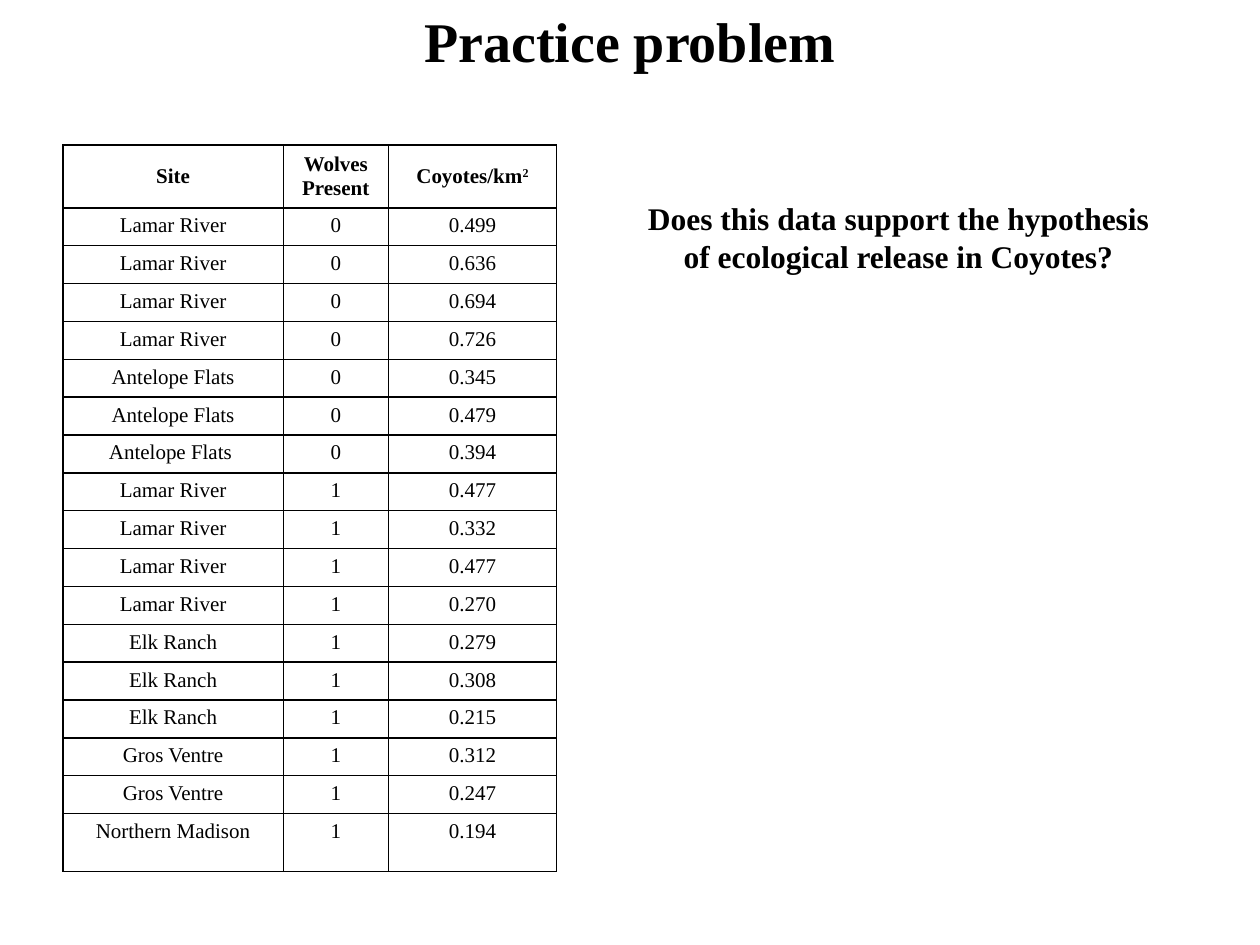
from lxml import etree
from pptx import Presentation
from pptx.dml.color import RGBColor
from pptx.enum.text import MSO_ANCHOR, MSO_AUTO_SIZE, PP_ALIGN
from pptx.oxml.ns import qn
from pptx.util import Cm, Pt

CENTER = PP_ALIGN.CENTER
MIDDLE, TOP = MSO_ANCHOR.MIDDLE, MSO_ANCHOR.TOP
FIT_SHAPE = MSO_AUTO_SIZE.SHAPE_TO_FIT_TEXT
COLORS = {"text": "000000", "border": "000000"}
FONT = "Times New Roman"


def write(tf, text, size, bold, superscript=""):
    """Fill a text frame with one centred paragraph."""
    p = tf.paragraphs[0]
    p.alignment = CENTER
    for part in filter(None, (text, superscript)):
        r = p.add_run()
        r.text = part
        for name, value in {"name": FONT, "size": Pt(size), "bold": bold}.items():
            setattr(r.font, name, value)
        r.font.color.rgb = RGBColor.from_string(COLORS["text"])
    if superscript:
        r.font._element.set("baseline", "30000")


def add_borders(cell):
    tc_pr = cell._tc.get_or_add_tcPr()
    for i, side in enumerate(("lnL", "lnR", "lnT", "lnB")):
        ln = etree.Element(qn(f"a:{side}"), w=str(Pt(1)))
        fill = etree.SubElement(ln, qn("a:solidFill"))
        etree.SubElement(fill, qn("a:srgbClr"), val=COLORS["border"])
        tc_pr.insert(i, ln)


prs = Presentation()
prs.slide_width, prs.slide_height = Cm(25.4), Cm(19.05)
s = prs.slides.add_slide(prs.slide_layouts[6])

# Title and question
TEXTS = [
    ("Practice problem", 32, (0, 0, 25.4, 1.62)),
    ("Does this data support the hypothesis of ecological release in Coyotes?",
     18, (12.5, 3.89, 11.23, 1.8)),
]
for text, size, box in TEXTS:
    tf = s.shapes.add_textbox(*map(Cm, box)).text_frame
    tf.word_wrap = True
    tf.auto_size = FIT_SHAPE
    write(tf, text, size, True)

# Coyote density by site, with and without wolves
DENSITIES = [
    ("Lamar River", 0, ["0.499", "0.636", "0.694", "0.726"]),
    ("Antelope Flats", 0, ["0.345", "0.479"]),
    ("Antelope Flats ", 0, ["0.394"]),
    ("Lamar River", 1, ["0.477", "0.332", "0.477", "0.270"]),
    ("Elk Ranch", 1, ["0.279", "0.308", "0.215"]),
    ("Gros Ventre", 1, ["0.312", "0.247"]),
    ("Northern Madison", 1, ["0.194"]),
]
rows = [("Site", "Wolves Present", "Coyotes/km")]
rows += [(site, str(wolves), d) for site, wolves, values in DENSITIES for d in values]
widths = [4.44, 2.12, 3.39]
heights = [1.27] + [0.764] * (len(rows) - 2) + [1.17]
heights = [round(h, 2) for h in heights]

table = s.shapes.add_table(len(rows), len(widths), Cm(1.27), Cm(2.92),
                           Cm(sum(widths)), Cm(sum(heights))).table
table.first_row = table.horz_banding = False
for column, width in zip(table.columns, widths):
    column.width = Cm(width)
for i, (row, height) in enumerate(zip(rows, heights)):
    table.rows[i].height = Cm(height)
    header = i == 0
    for j, text in enumerate(row):
        cell = table.cell(i, j)
        cell.fill.background()
        cell.vertical_anchor = MIDDLE if header else TOP
        write(cell.text_frame, text, 12, header, "2" if header and j == 2 else "")
        add_borders(cell)

prs.save("out.pptx")
